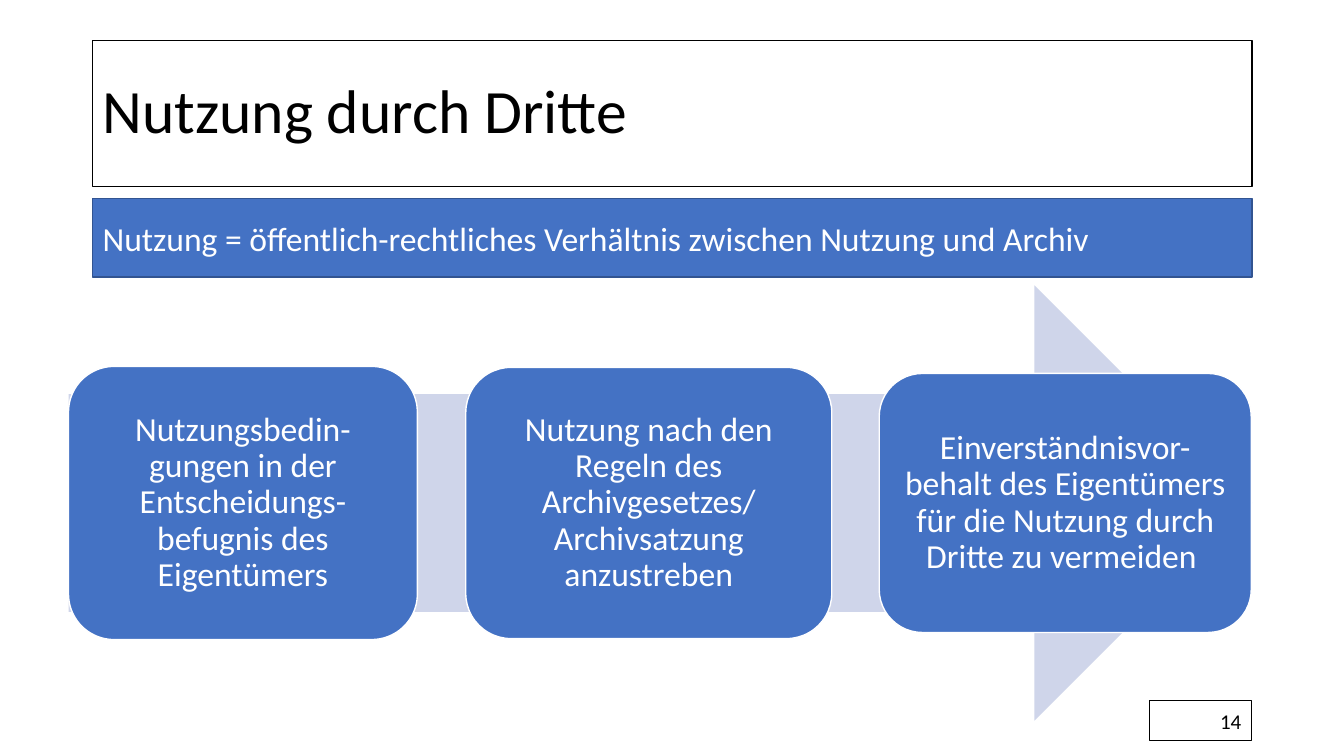
from lxml import etree
from pptx import Presentation
from pptx import util as u
from pptx.dml.color import RGBColor
from pptx.enum import shapes, text
from pptx.oxml.ns import qn

HUES = {"white": "FFFFFF", "black": "000000", "blue": "4472C4",
        "navy": "325491", "pale": "CFD5EA"}
KIND = shapes.MSO_SHAPE
ALIGN = text.PP_ALIGN


class Deck:
    """Holds the style and the current slide."""
    font = "Calibri"

    def __init__(self, wide, high):
        self.prs = Presentation()
        self.prs.slide_width = u.Inches(wide)
        self.prs.slide_height = u.Inches(high)
        self.slide = self.prs.slides.add_slide(self.prs.slide_layouts[6])

    def hue(self, name):
        return RGBColor.from_string(HUES[name])

    def shape(self, kind, box, fill, line=None, width=1):
        item = self.slide.shapes.add_shape(kind, *map(u.Inches, box))
        item.shadow.inherit = False
        item.fill.solid()
        item.fill.fore_color.rgb = self.hue(fill)
        if line:
            item.line.color.rgb = self.hue(line)
            item.line.width = u.Pt(width)
        else:
            item.line.fill.background()
        return item

    def label(self, item, words, size, color, align=ALIGN.LEFT, space=1.0, pad=None):
        frame = item.text_frame
        frame.word_wrap = True
        frame.vertical_anchor = text.MSO_ANCHOR.MIDDLE
        if pad is not None:
            for side in ("left", "right", "top", "bottom"):
                setattr(frame, f"margin_{side}", u.Inches(pad))
        para = frame.paragraphs[0]
        para.text = words
        for key, val in {"alignment": align, "line_spacing": space}.items():
            setattr(para, key, val)
        font = para.runs[0].font
        for key, val in {"name": self.font, "size": u.Pt(size)}.items():
            setattr(font, key, val)
        font.color.rgb = self.hue(color)

    def frame(self, box, words, size, width, **style):
        """Outlined box with a translucent white fill."""
        item = self.shape(KIND.RECTANGLE, box, "white", "black", width)
        tint = item.element.spPr.find(qn("a:solidFill"))[0]
        etree.SubElement(tint, qn("a:alpha")).set("val", "75000")
        self.label(item, words, size, "black", **style)

    def banner(self, box, words):
        item = self.shape(KIND.RECTANGLE, box, "blue", "navy")
        self.label(item, words, 24, "white")

    def arrow(self, box):
        self.shape(KIND.RIGHT_ARROW, box, "pale")

    def step(self, box, words):
        item = self.shape(KIND.ROUNDED_RECTANGLE, box, "blue", "white")
        self.label(item, words, 24, "white", ALIGN.CENTER, 0.9, 0.1)


def main():
    deck = Deck(13.33, 7.5)

    # Title and page number
    deck.frame((0.92, 0.4, 11.5, 1.45), "Nutzung durch Dritte", 44, 1, space=0.9)
    deck.frame((11.4, 6.95, 1.01, 0.4), "14", 15, 0.75, align=ALIGN.RIGHT)

    # Arrow with its three steps, centred on one axis
    top, high = 2.83, 4.32
    deck.arrow((0.68, top, 11.74, high))
    steps = [
        (0.68, 3.46, 2.71, "Nutzungsbedin-gungen in der Entscheidungs-befugnis "
                           "des Eigentümers"),
        (4.62, 3.63, 2.69, "Nutzung nach den Regeln des Archivgesetzes/ "
                           "Archivsatzung anzustreben"),
        (8.72, 3.69, 2.57, "Einverständnisvor-behalt des Eigentümers für die "
                           "Nutzung durch Dritte zu vermeiden "),
    ]
    for left, wide, tall, words in steps:
        deck.step((left, top + (high - tall) / 2, wide, tall), words)

    # Key statement
    deck.banner((0.92, 1.97, 11.5, 0.78),
                "Nutzung = öffentlich-rechtliches Verhältnis zwischen Nutzung und Archiv")

    deck.prs.save("out.pptx")


if __name__ == "__main__":
    main()
